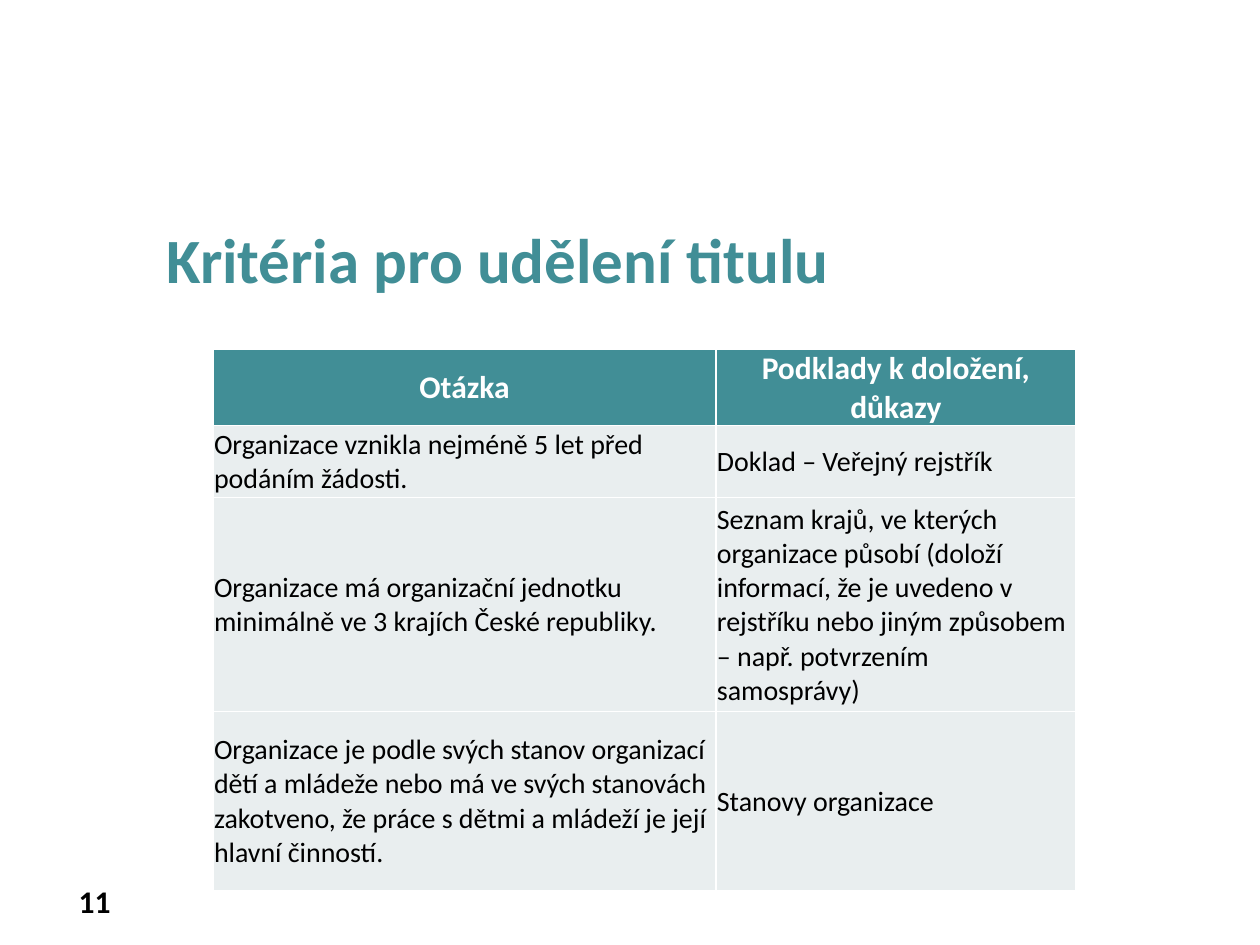
from dataclasses import dataclass

from lxml.etree import SubElement
from pptx import Presentation
from pptx.dml.color import RGBColor
from pptx.enum.text import MSO_ANCHOR, PP_ALIGN
from pptx.oxml.ns import qn
from pptx.util import Emu, Pt

# Content
TITLE = "Kritéria pro udělení titulu"
PAGE_NUMBER = "11"
HEADER = ("Otázka", "Podklady k doložení, důkazy")
CRITERIA = [
    ("Organizace vznikla nejméně 5 let před podáním žádosti.",
     "Doklad – Veřejný rejstřík"),
    ("Organizace má organizační jednotku minimálně ve 3 krajích České republiky.",
     "Seznam krajů, ve kterých organizace působí (doloží informací, že je uvedeno "
     "v rejstříku nebo jiným způsobem – např. potvrzením samosprávy)"),
    ("Organizace je podle svých stanov organizací dětí a mládeže nebo má ve svých "
     "stanovách zakotveno, že práce s dětmi a mládeží je její hlavní činností.",
     "Stanovy organizace"),
]

# Layout in px
PAGE_SIZE = (1260, 945)
TITLE_BOX = (154, 214, 1043, 694)
NUMBER_BOX = (34, 876, 89, 50)
TABLE_ORIGIN = (213, 349)
COLUMN_WIDTHS = (503, 360)
ROW_HEIGHTS = (72, 72, 214, 179)


@dataclass(frozen=True)
class Theme:
    font: str = "Calibri"
    accent: str = "418E96"
    pale: str = "E9EEEF"
    white: str = "FFFFFF"
    black: str = "000000"
    title_size: int = 36
    strong_size: int = 18
    body_size: int = 16
    border_width: int = 1


THEME = Theme()


def px(length):
    return Emu(round(length * 914400 / 126))


def write(frame, text, size, color, bold=False, align=PP_ALIGN.LEFT):
    para = frame.paragraphs[0]
    para.alignment = align
    span = para.add_run()
    span.text = text
    span.font.name = THEME.font
    span.font.size = Pt(size)
    span.font.bold = bold
    span.font.color.rgb = RGBColor.from_string(color)


def add_text(page, place, text, size, color, align=PP_ALIGN.LEFT):
    box = page.shapes.add_textbox(*map(px, place))
    box.text_frame.word_wrap = True
    write(box.text_frame, text, size, color, True, align)
    return box


def add_borders(cell):
    properties = cell._tc.get_or_add_tcPr()
    for position, side in enumerate(("a:lnL", "a:lnR", "a:lnT", "a:lnB")):
        line = SubElement(properties, qn(side), w=str(Pt(THEME.border_width)))
        fill = SubElement(line, qn("a:solidFill"))
        SubElement(fill, qn("a:srgbClr"), val=THEME.white)
        properties.insert(position, line)


def add_criteria_table(page):
    rows = [HEADER, *CRITERIA]
    size = (sum(COLUMN_WIDTHS), sum(ROW_HEIGHTS))
    table = page.shapes.add_table(
        len(rows), len(HEADER), *map(px, TABLE_ORIGIN + size)).table
    for column, width in zip(table.columns, COLUMN_WIDTHS):
        column.width = px(width)
    for row, height in zip(table.rows, ROW_HEIGHTS):
        row.height = px(height)

    for row_index, texts in enumerate(rows):
        is_header = row_index == 0
        for column_index, text in enumerate(texts):
            cell = table.cell(row_index, column_index)
            cell.margin_left = cell.margin_right = cell.margin_top = px(1)
            cell.margin_bottom = 0
            cell.vertical_anchor = MSO_ANCHOR.MIDDLE
            cell.fill.solid()
            cell.fill.fore_color.rgb = RGBColor.from_string(
                THEME.accent if is_header else THEME.pale)
            add_borders(cell)
            if is_header:
                write(cell.text_frame, text, THEME.strong_size, THEME.white,
                      True, PP_ALIGN.CENTER)
            else:
                write(cell.text_frame, text, THEME.body_size, THEME.black)


def main():
    deck = Presentation()
    deck.slide_width, deck.slide_height = map(px, PAGE_SIZE)
    page = deck.slides.add_slide(deck.slide_layouts[6])

    # Page number, title and table
    number = add_text(page, NUMBER_BOX, PAGE_NUMBER, THEME.strong_size,
                      THEME.black, PP_ALIGN.RIGHT)
    number.text_frame.vertical_anchor = MSO_ANCHOR.MIDDLE
    add_text(page, TITLE_BOX, TITLE, THEME.title_size, THEME.accent)
    add_criteria_table(page)

    deck.save("out.pptx")


if __name__ == "__main__":
    main()
